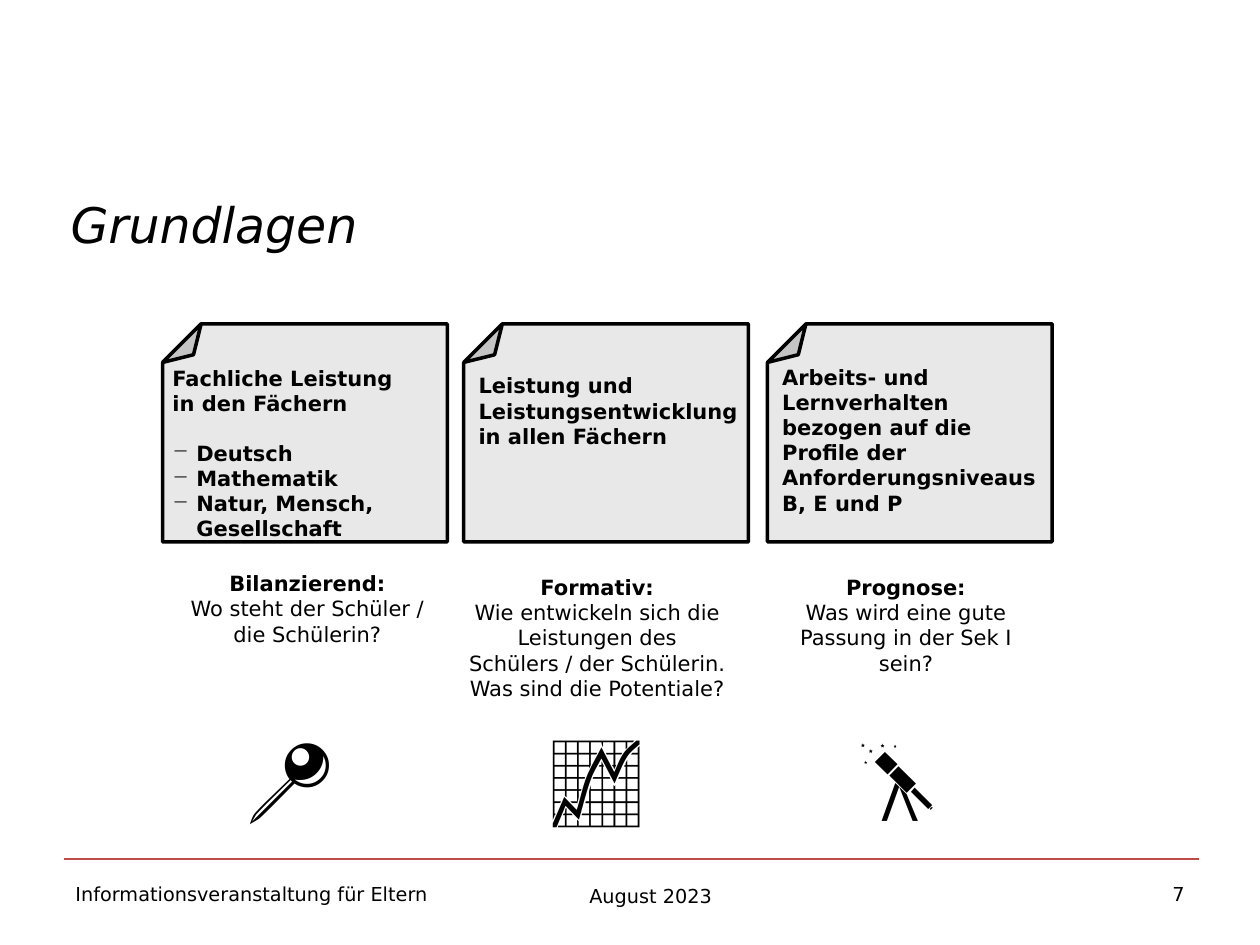
from dataclasses import dataclass

from lxml import etree
from pptx import Presentation
from pptx.dml.color import RGBColor
from pptx.enum.shapes import MSO_CONNECTOR, MSO_SHAPE
from pptx.enum.text import MSO_ANCHOR, PP_ALIGN
from pptx.oxml.ns import qn
from pptx.util import Inches, Pt

LEFT, CENTER, RIGHT = PP_ALIGN.LEFT, PP_ALIGN.CENTER, PP_ALIGN.RIGHT
MIDDLE = MSO_ANCHOR.MIDDLE
FOLDED, STRAIGHT = MSO_SHAPE.FOLDED_CORNER, MSO_CONNECTOR.STRAIGHT
FONT, ICON_FONT = "DejaVu Sans", "Roboto"
BLACK, GREY, RED = "000000", "D9D9D9", "BE4B48"
BODY = {"name": FONT, "size": Pt(12)}
BOLD = {**BODY, "bold": True}
TITLE = {"name": FONT, "size": Pt(28), "italic": True}
FOOTER = {"name": FONT, "size": Pt(11)}
ICON = {"name": ICON_FONT, "size": Pt(54)}
NOTE_TOP, NOTE_W, NOTE_H = 2.57, 2.26, 1.73
ICON_TOP, ICON_H = 5.64, 1.01


@dataclass
class Line:
    """One paragraph with its format."""

    text: str
    font: dict
    align: PP_ALIGN = LEFT
    bullet: bool = False
    before: float = 0


@dataclass
class Box:
    """Place of a text box in inches."""

    left: float
    top: float
    width: float
    height: float


@dataclass
class Column:
    """One note with its question and icon."""

    note_left: float
    note_box: Box
    note: list[Line]
    question_box: Box
    heading: str
    question: str
    icon_left: float
    icon_width: float
    icon: str


COLUMNS = [
    Column(
        1.29, Box(1.27, 2.85, NOTE_W, 1.51),
        [
            Line("Fachliche Leistung", BOLD),
            Line("in den Fächern", BOLD),
            Line("Deutsch", BOLD, bullet=True, before=14),
            Line("Mathematik", BOLD, bullet=True),
            Line("Natur, Mensch, Gesellschaft", BOLD, bullet=True),
        ],
        Box(1.27, 4.48, 2.34, 0.71), "Bilanzierend:",
        "Wo steht der Schüler / die Schülerin?",
        1.86, 1.16, "📍",
    ),
    Column(
        3.68, Box(3.7, 2.91, NOTE_W, 0.71),
        [Line("Leistung und Leistungsentwicklung in allen Fächern", BOLD)],
        Box(3.6, 4.51, 2.28, 1.11), "Formativ:",
        "Wie entwickeln sich die Leistungen des Schülers / der Schülerin. "
        "Was sind die Potentiale?",
        4.26, 0.96, "📈",
    ),
    Column(
        6.09, Box(6.11, 2.84, NOTE_W, 1.31),
        [Line("Arbeits- und Lernverhalten bezogen auf die Profile der "
              "Anforderungsniveaus B, E und P", BOLD)],
        Box(6.05, 4.51, 2.28, 0.91), "Prognose:",
        "Was wird eine gute Passung in der Sek I sein?",
        6.71, 0.96, "🔭",
    ),
]
FOOTERS = [
    (Box(7.17, 6.95, 2.33, 0.4), "7", RIGHT),
    (Box(0.5, 6.95, 3.08, 0.4), "Informationsveranstaltung für Eltern", LEFT),
    (Box(3.58, 6.97, 3.17, 0.4), "August 2023", CENTER),
]


def color(value: str) -> RGBColor:
    """Turn a hex string into a colour."""
    return RGBColor.from_string(value)


def add_bullet(p) -> None:
    """Give a paragraph a hanging dash."""
    pPr = p._p.get_or_add_pPr()
    pPr.set("marL", str(Inches(0.19)))
    pPr.set("indent", str(-Inches(0.19)))
    etree.SubElement(pPr, qn("a:buChar")).set("char", "−")


def add_text(s, box: Box, lines: list[Line], wrap: bool = True):
    """Add a text box and return its text frame."""
    sp = s.shapes.add_textbox(Inches(box.left), Inches(box.top),
                              Inches(box.width), Inches(box.height))
    tf = sp.text_frame
    tf.word_wrap = wrap
    for i, line in enumerate(lines):
        p = tf.add_paragraph() if i else tf.paragraphs[0]
        p.alignment = line.align
        if line.bullet:
            add_bullet(p)
        if line.before:
            p.space_before = Pt(line.before)
        r = p.add_run()
        r.text = line.text
        r.font.color.rgb = color(BLACK)
        for name, value in line.font.items():
            setattr(r.font, name, value)
    return tf


def add_note(s, left: float) -> None:
    """Add a translucent sheet with its corner folded at top left."""
    sp = s.shapes.add_shape(FOLDED, Inches(left), Inches(NOTE_TOP),
                            Inches(NOTE_W), Inches(NOTE_H))
    sp.rotation = 180
    spPr = sp._element.spPr
    guide = etree.SubElement(spPr.find(f".//{qn('a:avLst')}"), qn("a:gd"))
    guide.set("name", "adj")
    guide.set("fmla", "val 17700")
    sp.shadow.inherit = False
    sp.fill.solid()
    sp.fill.fore_color.rgb = color(GREY)
    tint = spPr.find(f"{qn('a:solidFill')}/{qn('a:srgbClr')}")
    etree.SubElement(tint, qn("a:alpha")).set("val", "60000")
    sp.line.color.rgb = color(BLACK)
    sp.line.width = Pt(2)


def add_rule(s) -> None:
    """Add the line above the footer."""
    y = Inches(6.82)
    sp = s.shapes.add_connector(STRAIGHT, Inches(0.51), y, Inches(9.52), y)
    sp.line.color.rgb = color(RED)
    sp.line.width = Pt(1.15)
    etree.SubElement(sp._element.spPr, qn("a:effectLst"))


def add_column(s, col: Column) -> None:
    """Add a note, its question and its icon."""
    add_note(s, col.note_left)
    add_text(s, col.note_box, col.note)
    add_text(s, col.question_box, [Line(col.heading, BOLD, CENTER),
                                   Line(col.question, BODY, CENTER)])
    add_text(s, Box(col.icon_left, ICON_TOP, col.icon_width, ICON_H),
             [Line(col.icon, ICON)], wrap=False)


def main() -> None:
    """Build the slide and save it."""
    prs = Presentation()
    prs.slide_width, prs.slide_height = Inches(10), Inches(7.5)
    s = prs.slides.add_slide(prs.slide_layouts[6])
    add_rule(s)
    tf = add_text(s, Box(0.5, 1.31, 10.01, 0.94), [Line("Grundlagen", TITLE)])
    tf.vertical_anchor = MIDDLE
    for side in ("left", "top", "right", "bottom"):
        setattr(tf, f"margin_{side}", Inches(0.06))
    for col in COLUMNS:
        add_column(s, col)
    for box, text, align in FOOTERS:
        add_text(s, box, [Line(text, FOOTER, align)])
    prs.save("out.pptx")


if __name__ == "__main__":
    main()
